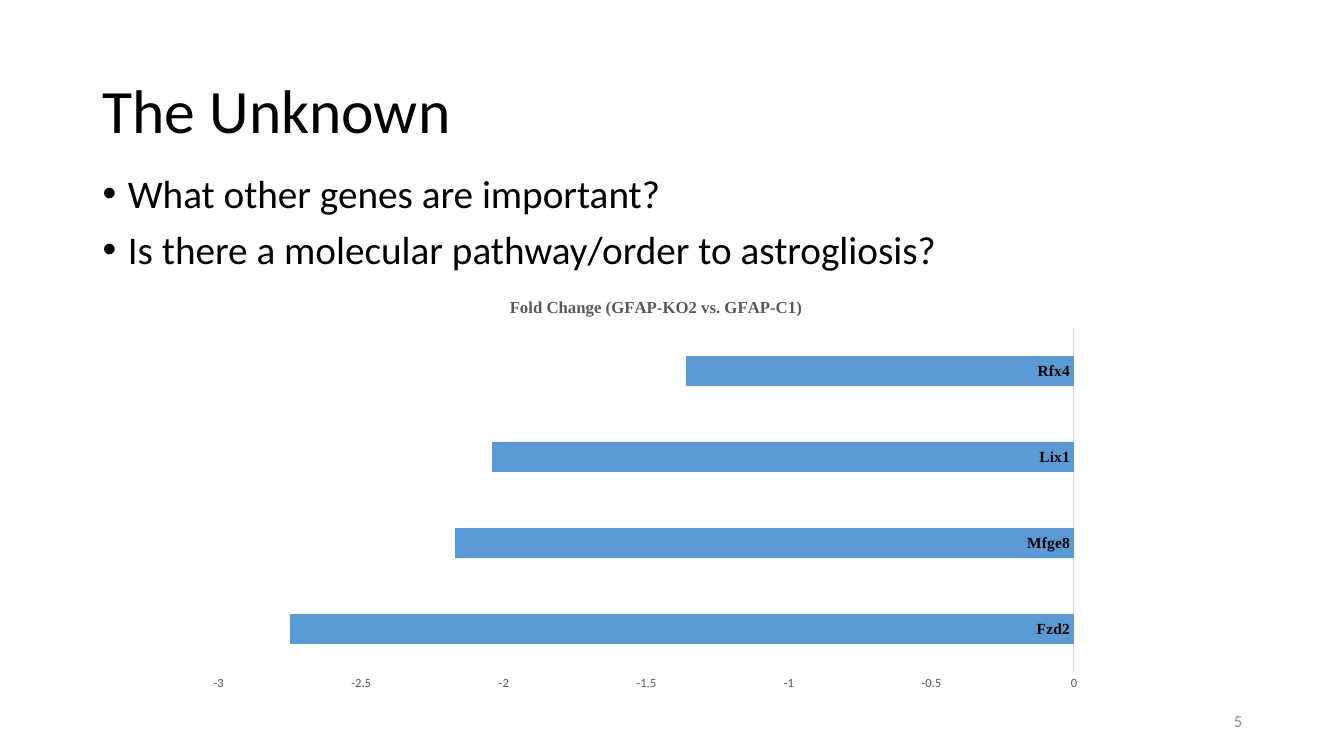
import dataclasses
import typing

import lxml.etree
import pptx
import pptx.chart.data
import pptx.dml.color
import pptx.enum.chart
import pptx.enum.text
import pptx.oxml
import pptx.oxml.ns
import pptx.util

Inches = pptx.util.Inches
Pt = pptx.util.Pt
RGB = pptx.dml.color.RGBColor.from_string
qn = pptx.oxml.ns.qn
ANCHOR = pptx.enum.text.MSO_ANCHOR
ALIGN = pptx.enum.text.PP_ALIGN


@dataclasses.dataclass(frozen=True)
class Theme:
    sans: str = "Calibri"
    serif: str = "Times New Roman"
    text: str = "000000"
    muted: str = "595959"
    number: str = "8C8C8C"
    bar: str = "5B9BD5"
    axis: str = "D9D9D9"
    title_size: int = 44
    body_size: int = 28
    small_size: int = 12
    label_size: int = 11
    chart_size: int = 10
    tick_size: int = 9


THEME = Theme()


@dataclasses.dataclass(frozen=True)
class TextBlock:
    box: tuple[float, float, float, float]
    lines: tuple[str, ...]
    size: int
    color: str
    anchor: ANCHOR = ANCHOR.MIDDLE
    paragraph: dict[str, typing.Any] = dataclasses.field(default_factory=dict)
    bullet: str = ""


class Gene(typing.NamedTuple):
    name: str
    fold_change: float


BLOCKS = (
    TextBlock((0.92, 0.4, 11.5, 1.45), ("The Unknown",), THEME.title_size,
              THEME.text, paragraph={"line_spacing": 0.9}),
    TextBlock((0.92, 1.68, 11.19, 4.76),
              ("What other genes are important?",
               "Is there a molecular pathway/order to astrogliosis?"),
              THEME.body_size, THEME.text, ANCHOR.TOP,
              {"line_spacing": 0.9, "space_before": Pt(10)}, "•"),
    TextBlock((9.42, 6.95, 3, 0.4), ("5",), THEME.small_size, THEME.number,
              paragraph={"alignment": ALIGN.RIGHT}),
)
GENES = (Gene("Fzd2", -2.75), Gene("Mfge8", -2.17),
         Gene("Lix1", -2.04), Gene("Rfx4", -1.36))
CHART_BOX = (1.99, 2.75, 8.93, 4.21)
CHART_TITLE = "Fold Change (GFAP-KO2 vs. GFAP-C1)"


def apply(target: typing.Any, values: dict[str, typing.Any]) -> None:
    for name, value in values.items():
        setattr(target, name, value)


def set_font(font: typing.Any, name: str, size: int, color: str, bold: bool = False) -> None:
    apply(font, {"name": name, "size": Pt(size), "bold": bold})
    font.color.rgb = RGB(color)


def add_text(slide: typing.Any, block: TextBlock) -> None:
    tf = slide.shapes.add_textbox(*map(Inches, block.box)).text_frame
    apply(tf, {"word_wrap": True, "vertical_anchor": block.anchor})
    for i, line in enumerate(block.lines):
        p = tf.add_paragraph() if i else tf.paragraphs[0]
        apply(p, block.paragraph)
        r = p.add_run()
        r.text = line
        set_font(r.font, THEME.sans, block.size, block.color)
        if block.bullet:
            pPr = p._p.get_or_add_pPr()
            pPr.set("marL", str(Inches(0.25)))
            pPr.set("indent", str(-Inches(0.25)))
            lxml.etree.SubElement(pPr, qn("a:buFont"), typeface="Arial")
            lxml.etree.SubElement(pPr, qn("a:buChar"), char=block.bullet)


def set_layout(parent: typing.Any, position: int, values: dict[str, typing.Any]) -> None:
    """Place a chart part by fractions of the chart area."""
    for old in parent.findall(qn("c:layout")):
        parent.remove(old)
    layout = pptx.oxml.parse_xml(f'<c:layout {pptx.oxml.ns.nsdecls("c")}/>')
    manual = lxml.etree.SubElement(layout, qn("c:manualLayout"))
    for name, value in values.items():
        lxml.etree.SubElement(manual, qn(f"c:{name}"), val=str(value))
    parent.insert(position, layout)


def add_fold_chart(slide: typing.Any) -> None:
    data = pptx.chart.data.CategoryChartData()
    data.categories = [gene.name for gene in GENES]
    data.add_series("Series 1", [gene.fold_change for gene in GENES])
    chart = slide.shapes.add_chart(
        pptx.enum.chart.XL_CHART_TYPE.BAR_CLUSTERED,
        *map(Inches, CHART_BOX), data).chart
    set_font(chart.font, THEME.sans, THEME.chart_size, THEME.text)
    apply(chart, {"has_legend": False, "has_title": True})

    # Heading
    tf = chart.chart_title.text_frame
    tf.text = CHART_TITLE
    set_font(tf.paragraphs[0].runs[0].font, THEME.serif, THEME.small_size,
             THEME.muted, True)
    chart.chart_title.include_in_layout = False
    set_layout(chart.chart_title._element, 1,
               {"xMode": "edge", "yMode": "edge", "x": 0.34, "y": 0.04})

    # Bars
    plot = chart.plots[0]
    apply(plot, {"gap_width": 182, "vary_by_categories": False})
    series = plot.series[0]
    series.invert_if_negative = False
    series.format.fill.solid()
    series.format.fill.fore_color.rgb = RGB(THEME.bar)

    # Axes
    no_tick = pptx.enum.chart.XL_TICK_MARK.NONE
    for axis in (chart.category_axis, chart.value_axis):
        apply(axis, {"major_tick_mark": no_tick, "minor_tick_mark": no_tick,
                     "has_major_gridlines": False})
    line = chart.category_axis.format.line
    line.color.rgb = RGB(THEME.axis)
    line.width = Pt(0.75)
    set_font(chart.category_axis.tick_labels.font, THEME.serif,
             THEME.label_size, THEME.text, True)
    apply(chart.value_axis, {"minimum_scale": -3, "maximum_scale": 0, "major_unit": 0.5})
    chart.value_axis.format.line.fill.background()
    set_font(chart.value_axis.tick_labels.font, THEME.sans,
             THEME.tick_size, THEME.muted)
    set_layout(plot._element.getparent(), 0,
               {"layoutTarget": "inner", "xMode": "edge", "yMode": "edge",
                "x": 0.02, "y": 0.12, "w": 0.95, "h": 0.81})


def main() -> None:
    prs = pptx.Presentation()
    apply(prs, {"slide_width": Inches(13.33), "slide_height": Inches(7.5)})
    slide = prs.slides.add_slide(prs.slide_layouts[6])
    # Title, questions and slide number
    for block in BLOCKS:
        add_text(slide, block)
    # Gene expression chart
    add_fold_chart(slide)
    prs.save("out.pptx")


if __name__ == "__main__":
    main()
